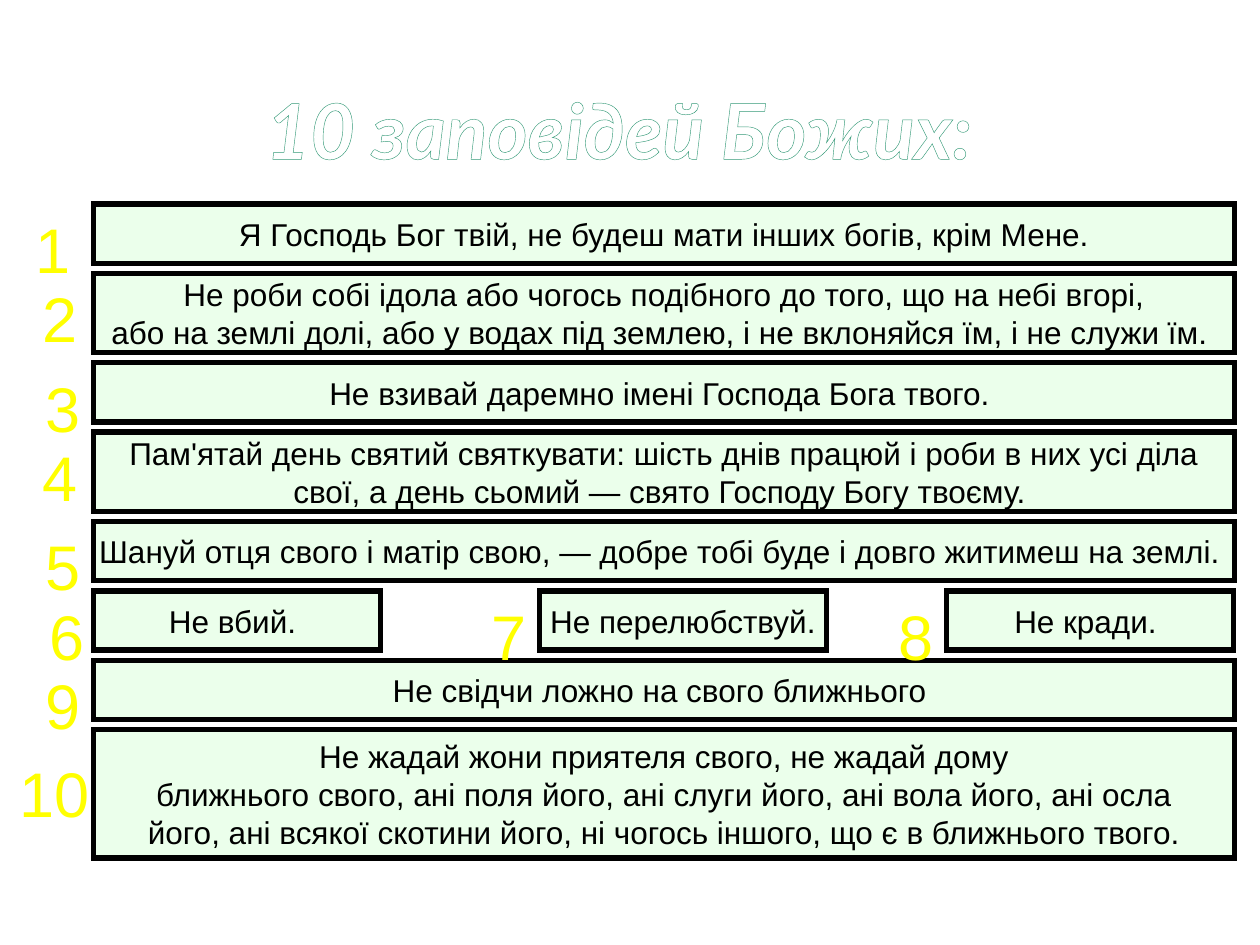
from lxml import etree
from pptx import Presentation
from pptx.dml.color import RGBColor
from pptx.enum.shapes import MSO_SHAPE
from pptx.enum.text import MSO_ANCHOR, PP_ALIGN
from pptx.oxml.ns import qn
from pptx.util import Inches, Pt

RECTANGLE = MSO_SHAPE.RECTANGLE
MIDDLE = MSO_ANCHOR.MIDDLE
TOP = MSO_ANCHOR.TOP
CENTER = PP_ALIGN.CENTER

WHITE = RGBColor(0xFF, 0xFF, 0xFF)
BLACK = RGBColor(0x00, 0x00, 0x00)
YELLOW = RGBColor(0xFF, 0xFF, 0x00)
MINT = RGBColor(0xEB, 0xFF, 0xEB)
GREEN = RGBColor(0x33, 0x99, 0x77)

FIRST_TOP = 1.62
ROW_GAP = 0.08
LEFT = 0.74
FULL_WIDTH = 9.06
SHORT_WIDTH = 2.28
NUMBER_WIDTH = 0.64
NUMBER_HEIGHT = 0.65

ROWS = [
    (0.47, [("1", 0.42, 0, 2.5, LEFT, FULL_WIDTH, [
        "Я Господь Бог твій, не будеш мати інших богів, крім Мене."])]),
    (0.63, [("2", 0.48, 0, 1.75, LEFT, FULL_WIDTH, [
        "Не роби собі ідола або чогось подібного до того, що на небі вгорі,",
        "або на землі долі, або у водах під землею, і не вклоняйся їм, і не служи їм. "])]),
    (0.47, [("3", 0.5, 0, 1.75, LEFT, FULL_WIDTH, [
        "Не взивай даремно імені Господа Бога твого. "])]),
    (0.63, [("4", 0.48, 0, 1.75, LEFT, FULL_WIDTH, [
        "Пам'ятай день святий святкувати: шість днів працюй і роби в них усі діла",
        "свої, а день сьомий — свято Господу Богу твоєму. "])]),
    (0.47, [("5", 0.5, 0, 1.5, LEFT, FULL_WIDTH, [
        "Шануй отця свого і матір свою, — добре тобі буде і довго житимеш на землі. "])]),
    (0.47, [
        ("6", 0.53, 0, 0.75, LEFT, SHORT_WIDTH, ["Не вбий. "]),
        ("7", 4.04, 0, 2, 4.28, SHORT_WIDTH, ["Не перелюбствуй."]),
        ("8", 7.27, 0, 2, 7.51, SHORT_WIDTH, ["Не кради. "]),
    ]),
    (0.47, [("9", 0.5, 0, 1.75, LEFT, FULL_WIDTH, [
        "Не свідчи ложно на свого ближнього "])]),
    (1.02, [("10", 0.43, 0.15, 1.75, LEFT, FULL_WIDTH, [
        "Не жадай жони приятеля свого, не жадай дому",
        "ближнього свого, ані поля його, ані слуги його, ані вола його, ані осла",
        "його, ані всякої скотини його, ні чогось іншого, що є в ближнього твого."])]),
]


def write_lines(frame, lines, size, color, font_name="Arial"):
    spans = []
    for index, line in enumerate(lines):
        para = frame.add_paragraph() if index else frame.paragraphs[0]
        para.alignment = CENTER
        span = para.add_run()
        span.text = line
        span.font.size = Pt(size)
        span.font.name = font_name
        span.font.color.rgb = color
        spans.append(span)
    return spans


def outline_text(span, color, width):
    outline = etree.Element(qn("a:ln"), w=str(Pt(width)))
    fill = etree.SubElement(outline, qn("a:solidFill"))
    etree.SubElement(fill, qn("a:srgbClr"), val=str(color))
    span._r.get_or_add_rPr().insert(0, outline)


def add_title(page, text):
    box = page.shapes.add_textbox(Inches(0.5), Inches(0.52), Inches(8.83), Inches(1))
    frame = box.text_frame
    frame.word_wrap = True
    frame.vertical_anchor = MIDDLE
    span = write_lines(frame, [text], 44, WHITE, "Lato")[0]
    span.font.bold = True
    span.font.italic = True
    outline_text(span, GREEN, 2.48)


def add_commandment(page, left, top, width, height, lines):
    box = page.shapes.add_shape(
        RECTANGLE, Inches(left), Inches(top), Inches(width), Inches(height))
    box.shadow.inherit = False
    box.fill.solid()
    box.fill.fore_color.rgb = MINT
    box.line.color.rgb = BLACK
    box.line.width = Pt(3)
    etree.SubElement(box.line._get_or_add_ln(), qn("a:miter"), lim="800000")
    box.text_frame.word_wrap = False
    box.text_frame.vertical_anchor = MIDDLE
    write_lines(box.text_frame, lines, 18, BLACK)


def add_number(page, number, center, top, outline_width):
    box = page.shapes.add_textbox(
        Inches(center - NUMBER_WIDTH / 2), Inches(top),
        Inches(NUMBER_WIDTH), Inches(NUMBER_HEIGHT))
    frame = box.text_frame
    frame.margin_left = frame.margin_right = 0
    frame.word_wrap = True
    frame.vertical_anchor = TOP
    span = write_lines(frame, [number], 36, YELLOW)[0]
    outline_text(span, BLACK, outline_width)


def main():
    deck = Presentation()
    deck.slide_width = Inches(10)
    deck.slide_height = Inches(7.5)
    page = deck.slides.add_slide(deck.slide_layouts[6])
    page.background.fill.solid()
    page.background.fill.fore_color.rgb = WHITE

    add_title(page, "10 заповідей Божих:")
    top = FIRST_TOP
    numbers = []
    for height, commandments in ROWS:
        for number, center, drop, outline_width, left, width, lines in commandments:
            add_commandment(page, left, top, width, height, lines)
            numbers.append((number, center, top + drop, outline_width))
        top += height + ROW_GAP
    for number in numbers:
        add_number(page, *number)

    deck.save("out.pptx")


if __name__ == "__main__":
    main()
